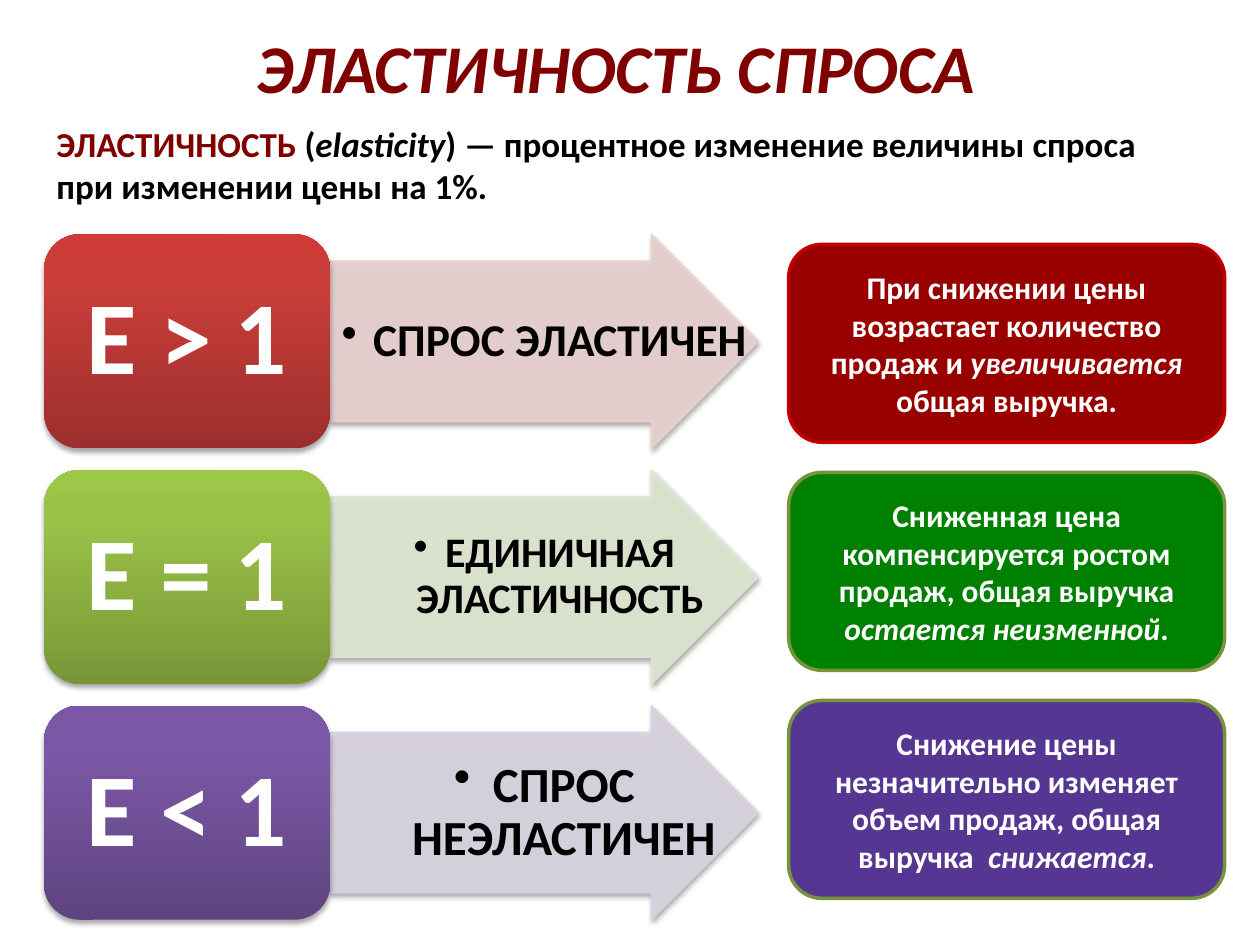
from lxml.etree import SubElement
from pptx import Presentation
from pptx.dml.color import RGBColor
from pptx.enum.dml import MSO_FILL
from pptx.enum.shapes import MSO_SHAPE
from pptx.enum.text import MSO_ANCHOR, MSO_AUTO_SIZE, PP_ALIGN
from pptx.oxml.ns import qn
from pptx.util import Inches, Pt

FONT = "Calibri"
MAROON = RGBColor(0x80, 0x00, 0x00)
BLACK = RGBColor(0x00, 0x00, 0x00)
WHITE = RGBColor(0xFF, 0xFF, 0xFF)
RED = RGBColor(0xC0, 0x00, 0x00)
OLIVE = RGBColor(0x77, 0x93, 0x3C)
DARK_RED = RGBColor(0x99, 0x00, 0x00)
GREEN = RGBColor(0x00, 0x80, 0x00)
VIOLET = RGBColor(0x55, 0x36, 0x92)
PINK = RGBColor(0xE8, 0xD0, 0xD0)
PALE_GREEN = RGBColor(0xDE, 0xE7, 0xD1)
PALE_VIOLET = RGBColor(0xD8, 0xD3, 0xE0)
RED_STOPS = [(0, "9C2F2D"), (80, "CB3E3A"), (100, "CE3B37")]
GREEN_STOPS = [(0, "779737"), (80, "9BC348"), (100, "9DC746")]
VIOLET_STOPS = [(0, "5F4480"), (80, "7B58A6"), (100, "7C57A8")]

LEFT, BADGE_W, ARROW_W, ROW_H = 0.35, 2.27, 3.4, 1.7
ROW_TOP, ROW_STEP = 1.86, 1.87
NOTE_LEFT, NOTE_TOP, NOTE_STEP, NOTE_W, NOTE_H = 6.26, 1.94, 1.81, 3.46, 1.57

# formula, gradient, arrow colour, label, label size, hanging indent
DEMAND_KINDS = [
    ("Е > 1", RED_STOPS, PINK, "СПРОС ЭЛАСТИЧЕН", 26, 0.25),
    ("Е = 1", GREEN_STOPS, PALE_GREEN, "ЕДИНИЧНАЯ ЭЛАСТИЧНОСТЬ", 24, 0.25),
    ("Е < 1", VIOLET_STOPS, PALE_VIOLET, "СПРОС НЕЭЛАСТИЧЕН", 28, 0.31),
]
# fill, outline, text before, emphasised text, text after
NOTES = [
    (DARK_RED, RED, "При снижении цены возрастает количество продаж и ",
     "увеличивается", " общая выручка."),
    (GREEN, OLIVE, "Сниженная цена компенсируется ростом продаж, общая выручка ",
     "остается неизменной", "."),
    (VIOLET, OLIVE, "Снижение цены незначительно изменяет объем продаж, общая выручка ",
     " снижается", "."),
]


def add_run(p, text, size, color, italic=False):
    r = p.add_run()
    r.text = text
    r.font.name = FONT
    r.font.size = Pt(size)
    r.font.bold = True
    r.font.italic = italic
    r.font.color.rgb = color


def setup_frame(sp, margins=None, align=PP_ALIGN.CENTER, anchor=MSO_ANCHOR.MIDDLE):
    """Prepare the text frame and return its first paragraph."""
    tf = sp.text_frame
    tf.word_wrap = True
    tf.auto_size = MSO_AUTO_SIZE.NONE
    tf.vertical_anchor = anchor
    if margins:
        tf.margin_left = tf.margin_right = Inches(margins[0])
        tf.margin_top = tf.margin_bottom = Inches(margins[1])
    p = tf.paragraphs[0]
    p.alignment = align
    return p


def add_box(s, kind, x, y, w, h):
    sp = s.shapes.add_shape(kind, Inches(x), Inches(y), Inches(w), Inches(h))
    sp.shadow.inherit = False
    return sp


def add_text_box(s, x, y, w, h):
    return s.shapes.add_textbox(Inches(x), Inches(y), Inches(w), Inches(h))


def set_shadow(sp):
    effects = sp._element.spPr.find(qn("a:effectLst"))
    shadow = SubElement(effects, qn("a:outerShdw"), blurRad=str(Pt(3.1)),
                        dist=str(Pt(1.8)), dir="5400000", rotWithShape="0")
    color = SubElement(shadow, qn("a:srgbClr"), val="000000")
    SubElement(color, qn("a:alpha"), val="35000")


def set_gradient(sp, stops):
    """Fill from bottom to top with the given stops."""
    sp.fill.gradient()
    sp.fill.gradient_angle = 90
    stop_list = sp._element.spPr.find(qn("a:gradFill")).find(qn("a:gsLst"))
    for old in list(stop_list):
        stop_list.remove(old)
    for pos, color in stops:
        stop = SubElement(stop_list, qn("a:gs"), pos=str(pos * 1000))
        SubElement(stop, qn("a:srgbClr"), val=color)


def set_alpha(fill_parent, percent):
    color = fill_parent.find(qn("a:solidFill")).find(qn("a:srgbClr"))
    SubElement(color, qn("a:alpha"), val=str(percent * 1000))


def set_bullet(p, indent):
    pPr = p._p.get_or_add_pPr()
    pPr.set("marL", str(Inches(indent)))
    pPr.set("indent", str(-Inches(indent)))
    SubElement(pPr, qn("a:buChar"), char="•")


def add_title(s):
    title = s.shapes.title
    title.left, title.top = Inches(0.35), Inches(0.21)
    title.width, title.height = Inches(9.08), Inches(0.71)
    p = setup_frame(title)
    p.line_spacing = 0.9
    add_run(p, "ЭЛАСТИЧНОСТЬ СПРОСА", 39, MAROON, italic=True)


def add_definition(s):
    p = setup_frame(add_text_box(s, 0.35, 0.92, 9.13, 0.77),
                    align=PP_ALIGN.LEFT, anchor=MSO_ANCHOR.TOP)
    add_run(p, "ЭЛАСТИЧНОСТЬ", 20, MAROON)
    add_run(p, "\u00a0(", 20, BLACK)
    add_run(p, "elasticity", 20, BLACK, italic=True)
    add_run(p, ")\u00a0— процентное изменение величины спроса при изменении цены на 1%.",
            20, BLACK)


def add_arrow(s, y, color, label, size, indent):
    area = (LEFT + BADGE_W, y, ARROW_W, ROW_H)
    sp = add_box(s, MSO_SHAPE.RIGHT_ARROW, *area)
    sp.adjustments[0], sp.adjustments[1] = 0.75, 0.5
    sp.fill.solid()
    sp.fill.fore_color.rgb = color
    sp.line.color.rgb = color
    sp.line.width = Pt(0.75)
    spPr = sp._element.spPr
    set_alpha(spPr, 90)
    set_alpha(spPr.find(qn("a:ln")), 90)
    set_shadow(sp)
    # The label spans the whole arrow, head included
    p = setup_frame(add_text_box(s, *area), (0.02, 0.02))
    p.line_spacing = 0.9
    set_bullet(p, indent)
    add_run(p, label, size, BLACK)


def add_badge(s, y, formula, stops):
    sp = add_box(s, MSO_SHAPE.ROUNDED_RECTANGLE, LEFT, y, BADGE_W, ROW_H)
    set_gradient(sp, stops)
    sp.line.fill.background()
    set_shadow(sp)
    p = setup_frame(sp, (0.12, 0.04))
    p.line_spacing = 0.9
    add_run(p, formula, 59, WHITE)


def add_note(s, y, fill, outline, before, emphasis, after):
    sp = add_box(s, MSO_SHAPE.ROUNDED_RECTANGLE, NOTE_LEFT, y, NOTE_W, NOTE_H)
    sp.fill.solid()
    sp.fill.fore_color.rgb = fill
    sp.line.color.rgb = outline
    sp.line.width = Pt(2)
    p = setup_frame(sp)
    add_run(p, before, 18, WHITE)
    add_run(p, emphasis, 18, WHITE, italic=True)
    add_run(p, after, 18, WHITE)


def main():
    prs = Presentation()
    prs.slide_width, prs.slide_height = Inches(10), Inches(7.5)
    s = prs.slides.add_slide(prs.slide_layouts[5])
    add_title(s)
    add_definition(s)
    # Formula badges with arrows
    for i, (formula, stops, color, label, size, indent) in enumerate(DEMAND_KINDS):
        y = ROW_TOP + i * ROW_STEP
        add_arrow(s, y, color, label, size, indent)
        add_badge(s, y, formula, stops)
    # Effects on revenue
    for i, note in enumerate(NOTES):
        add_note(s, NOTE_TOP + i * NOTE_STEP, *note)
    prs.save("out.pptx")


if __name__ == "__main__":
    main()
